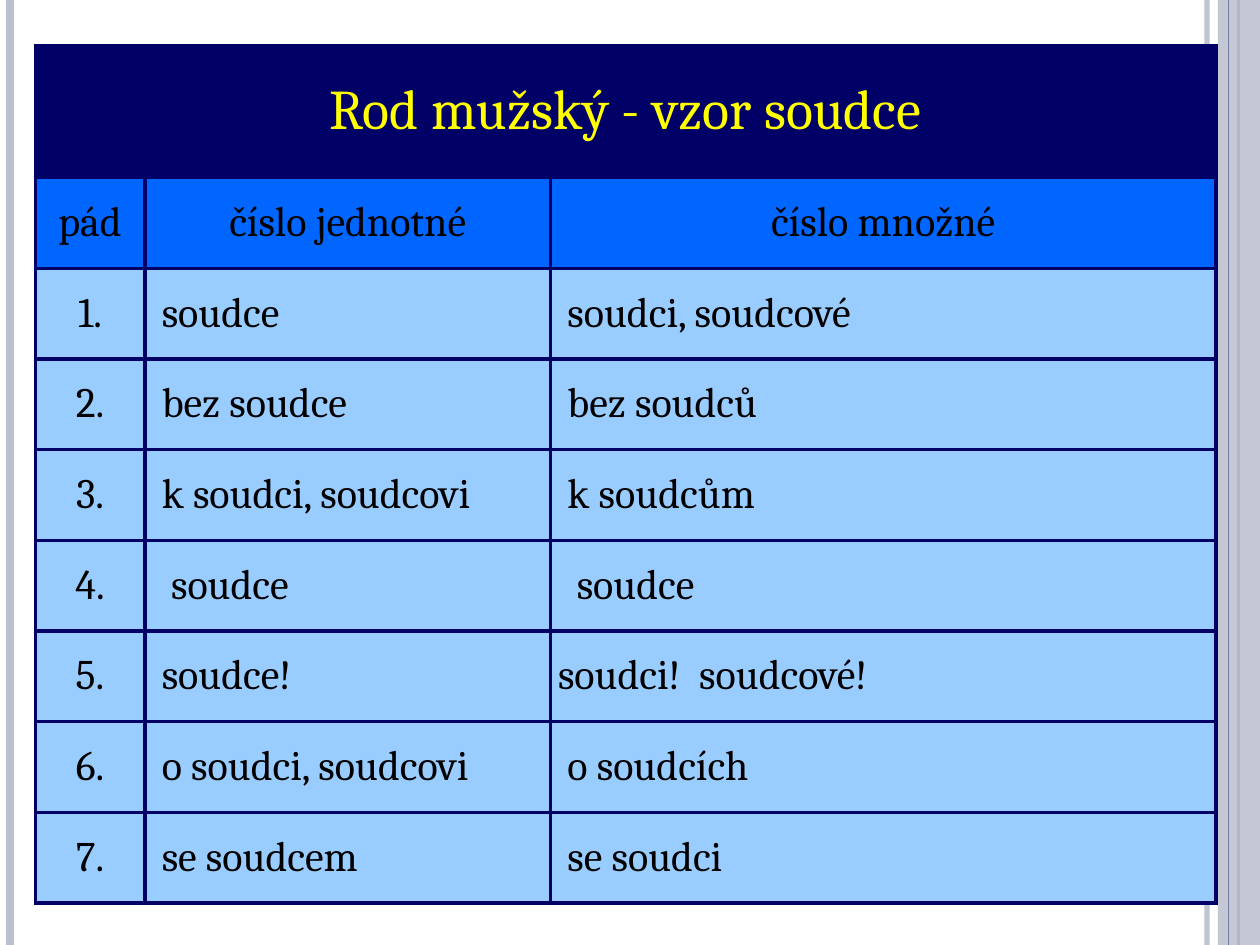
from lxml import etree
from pptx import Presentation
from pptx.dml.color import RGBColor
from pptx.enum.shapes import MSO_CONNECTOR, MSO_SHAPE
from pptx.enum.text import MSO_ANCHOR, PP_ALIGN
from pptx.oxml.ns import qn
from pptx.util import Pt

STRAIGHT = MSO_CONNECTOR.STRAIGHT
RECTANGLE = MSO_SHAPE.RECTANGLE
MIDDLE = MSO_ANCHOR.MIDDLE
CENTER, LEFT = PP_ALIGN.CENTER, PP_ALIGN.LEFT

PAGE_WIDTH, PAGE_HEIGHT = 720, 540
NAVY, BLUE, SKY = "000066", "0066FF", "99CCFF"
YELLOW, BLACK = "FFFF00", "000000"
GREY, SLATE = "BCBFCE", "727CA3"

TITLE = "Rod mužský - vzor soudce"
HEADINGS = ["pád", "číslo jednotné", "číslo množné"]
FORMS = [
    ("soudce", "soudci, soudcové"),
    ("bez soudce", "bez soudců"),
    ("k soudci, soudcovi", "k soudcům"),
    ("soudce", "soudce"),
    ("soudce!", "soudci!  soudcové!"),
    ("o soudci, soudcovi", "o soudcích"),
    ("se soudcem", "se soudci"),
]
# Indents counted in space widths; every other form is indented by one.
INDENTS = {(4, 1): 2, (4, 2): 2, (5, 2): 0}
SPACE = 5.35
COLUMN_WIDTHS = [62.64, 231.84, 380.16]
ROW_HEIGHTS = [75.6] + [51.84] * (len(FORMS) + 1)


def color(hex_text):
    return RGBColor.from_string(hex_text)


def set_alpha(properties, percent):
    """Make the first solid colour below the element partly transparent."""
    tint = properties.find(".//" + qn("a:srgbClr"))
    etree.SubElement(tint, qn("a:alpha")).set("val", str(percent * 1000))


def write(frame, text, *, size=24, ink=BLACK, align=LEFT, font="Cambria"):
    para = frame.paragraphs[0]
    para.alignment = align
    span = para.add_run()
    span.text = text
    span.font.name = font
    span.font.size = Pt(size)
    span.font.color.rgb = color(ink)


class Page:
    """Holds the table style and the slide being drawn."""

    border_color = NAVY
    border_width = 2.25
    inset_x, inset_y = 4.32, 2.16

    def __init__(self, deck):
        self.slide = deck.slides.add_slide(deck.slide_layouts[6])

    def vertical_line(self, x, width, ink, alpha=None):
        line = self.slide.shapes.add_connector(
            STRAIGHT, Pt(x), Pt(0), Pt(x), Pt(PAGE_HEIGHT))
        line.line.width = Pt(width)
        line.line.color.rgb = color(ink)
        properties = line._element.spPr
        if alpha:
            set_alpha(properties, alpha)
        etree.SubElement(properties, qn("a:effectLst"))

    def band(self, x, width, fill, alpha):
        box = self.slide.shapes.add_shape(
            RECTANGLE, Pt(x), Pt(0), Pt(width), Pt(PAGE_HEIGHT))
        box.shadow.inherit = False
        box.fill.solid()
        box.fill.fore_color.rgb = color(fill)
        box.line.fill.background()
        set_alpha(box._element.spPr, alpha)

    def table(self, x, y, widths, heights):
        frame = self.slide.shapes.add_table(
            len(heights), len(widths), Pt(x), Pt(y),
            Pt(sum(widths)), Pt(sum(heights)))
        table = frame.table
        table.first_row = table.horz_banding = False
        for column, width in zip(table.columns, widths):
            column.width = Pt(width)
        for row, height in zip(table.rows, heights):
            row.height = Pt(height)
        return table

    def cell(self, cell, fill, text="", indent=0, **text_format):
        cell.vertical_anchor = MIDDLE
        cell.margin_left = Pt(self.inset_x + indent)
        cell.margin_right = Pt(self.inset_x)
        cell.margin_top = cell.margin_bottom = Pt(self.inset_y)
        self.borders(cell)
        cell.fill.solid()
        cell.fill.fore_color.rgb = color(fill)
        if text:
            write(cell.text_frame, text, **text_format)

    def borders(self, cell):
        properties = cell._tc.get_or_add_tcPr()
        for side in ("lnL", "lnR", "lnT", "lnB"):
            edge = etree.SubElement(properties, qn("a:" + side))
            edge.set("w", str(Pt(self.border_width)))
            paint = etree.SubElement(edge, qn("a:solidFill"))
            etree.SubElement(paint, qn("a:srgbClr")).set("val", self.border_color)


def main():
    deck = Presentation()
    deck.slide_width, deck.slide_height = Pt(PAGE_WIDTH), Pt(PAGE_HEIGHT)
    page = Page(deck)

    page.vertical_line(689.76, 3, GREY, alpha=93)
    page.vertical_line(5.76, 4.5, GREY)
    page.vertical_line(707.76, 1.5, SLATE)
    page.band(696, 24, GREY, alpha=87)
    page.vertical_line(702, 0.75, SLATE)

    table = page.table(20.16, 25.92, COLUMN_WIDTHS, ROW_HEIGHTS)
    table.cell(0, 0).merge(table.cell(0, 2))
    page.cell(table.cell(0, 0), NAVY, TITLE, size=32, ink=YELLOW, align=CENTER)
    for column, heading in enumerate(HEADINGS):
        if column:
            page.cell(table.cell(0, column), NAVY)
        page.cell(table.cell(1, column), BLUE, heading, align=CENTER)
    for number, forms in enumerate(FORMS, start=1):
        row = number + 1
        page.cell(table.cell(row, 0), SKY, f"{number}.", align=CENTER)
        for column, form in enumerate(forms, start=1):
            indent = INDENTS.get((number, column), 1) * SPACE
            page.cell(table.cell(row, column), SKY, form, indent)

    deck.save("out.pptx")


if __name__ == "__main__":
    main()
